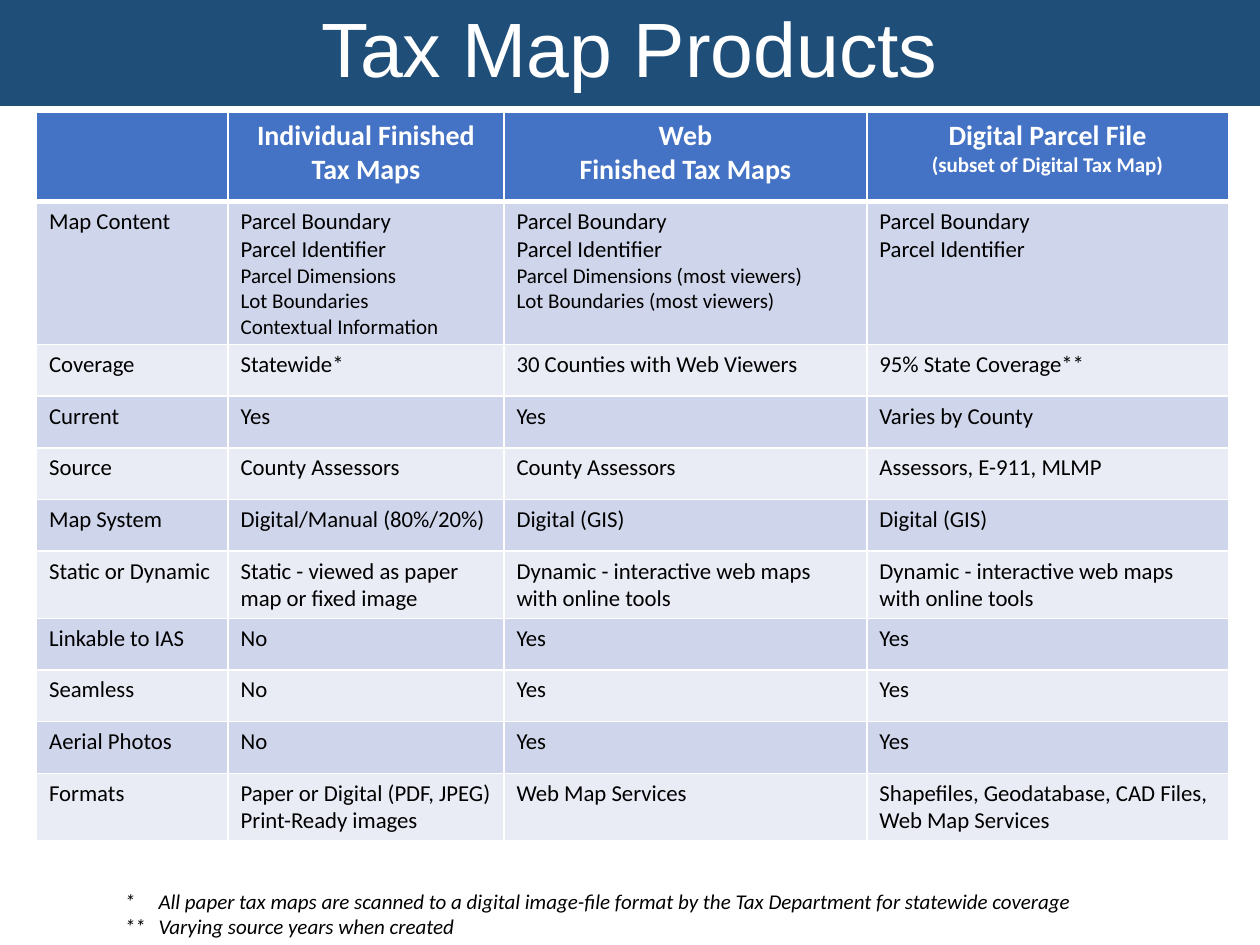
from lxml import etree
from pptx import Presentation
from pptx.dml.color import RGBColor
from pptx.enum.shapes import MSO_SHAPE
from pptx.enum.text import MSO_ANCHOR, PP_ALIGN
from pptx.oxml.ns import qn
from pptx.util import Pt

RECTANGLE = MSO_SHAPE.RECTANGLE
MIDDLE = MSO_ANCHOR.MIDDLE
CENTER, LEFT = PP_ALIGN.CENTER, PP_ALIGN.LEFT

EMU_PER_PX = 9144  # 100 px to the inch
COLORS = {
    "banner": "1F4E79",
    "header": "4472C4",
    "dark_band": "CFD5EA",
    "light_band": "E9EBF5",
    "white": "FFFFFF",
    "black": "000000",
}

COLUMN_WIDTHS = [152, 219, 288, 287]
HEADER_HEIGHT, ROW_HEIGHT = 71, 41
BODY_SIZE, SMALL_SIZE = 13, 12

# Each cell is a list of lines; a line is a text or a (text, size) pair
HEADERS = [
    [],
    ["Individual Finished Tax Maps"],
    ["Web", "Finished Tax Maps"],
    ["Digital Parcel File", ("(subset of Digital Tax Map)", SMALL_SIZE)],
]
PARCEL = ["Parcel Boundary", "Parcel Identifier"]
INTERACTIVE = "Dynamic - interactive web maps with online tools"
ROWS = [
    [["Map Content"],
     PARCEL + [("Parcel Dimensions", SMALL_SIZE), ("Lot Boundaries", SMALL_SIZE),
               ("Contextual Information", SMALL_SIZE)],
     PARCEL + [("Parcel Dimensions (most viewers)", SMALL_SIZE),
               ("Lot Boundaries (most viewers)", SMALL_SIZE)],
     PARCEL],
    [["Coverage"], ["Statewide*"], ["30 Counties with Web Viewers"], ["95% State Coverage**"]],
    [["Current"], ["Yes"], ["Yes"], ["Varies by County"]],
    [["Source"], ["County Assessors"], ["County Assessors"], ["Assessors, E-911, MLMP"]],
    [["Map System"], ["Digital/Manual (80%/20%)"], ["Digital (GIS)"], ["Digital (GIS)"]],
    [["Static or Dynamic"], ["Static - viewed as paper map or fixed image"],
     [INTERACTIVE], [INTERACTIVE]],
    [["Linkable to IAS"], ["No"], ["Yes"], ["Yes"]],
    [["Seamless"], ["No"], ["Yes"], ["Yes"]],
    [["Aerial Photos"], ["No"], ["Yes"], ["Yes"]],
    [["Formats"], ["Paper or Digital (PDF, JPEG) Print-Ready images"],
     ["Web Map Services"], ["Shapefiles, Geodatabase, CAD Files, Web Map Services"]],
]
FOOTNOTES = [
    "*\tAll paper tax maps are scanned to a digital image-file format "
    "by the Tax Department for statewide coverage",
    "**\tVarying source years when created",
]


def px(length):
    return length * EMU_PER_PX


def rgb(name):
    return RGBColor.from_string(COLORS[name])


class SlideBuilder:
    font = "Calibri"

    def __init__(self, page):
        self.page = page

    def add_lines(self, frame, lines, size, color, align=LEFT, font=None, bold=False, italic=False):
        for index, line in enumerate(lines):
            text, line_size = line if isinstance(line, tuple) else (line, size)
            para = frame.paragraphs[0] if index == 0 else frame.add_paragraph()
            para.alignment = align
            span = para.add_run()
            span.text = text
            span.font.name = font or self.font
            span.font.size = Pt(line_size)
            span.font.bold = bold
            span.font.italic = italic
            span.font.color.rgb = rgb(color)

    def banner(self, left, top, width, height, text):
        box = self.page.shapes.add_shape(RECTANGLE, px(left), px(top), px(width), px(height))
        box.shadow.inherit = False
        box.fill.solid()
        box.fill.fore_color.rgb = rgb("banner")
        box.line.fill.background()
        box.text_frame.vertical_anchor = MIDDLE
        self.add_lines(box.text_frame, [text], 44, "white", CENTER, font="Arial")
        box.text_frame.paragraphs[0].line_spacing = 0.9

    def notes(self, left, top, width, height, lines, indent):
        box = self.page.shapes.add_textbox(px(left), px(top), px(width), px(height))
        box.text_frame.word_wrap = True
        self.add_lines(box.text_frame, lines, SMALL_SIZE, "black", italic=True)
        for para in box.text_frame.paragraphs:
            properties = para._p.get_or_add_pPr()
            properties.set("marL", str(px(indent)))
            properties.set("indent", str(-px(indent)))

    def borders(self, cell, **widths):
        properties = cell._tc.get_or_add_tcPr()
        for side in ("L", "R", "T", "B"):
            line = etree.SubElement(properties, qn(f"a:ln{side}"), w=str(Pt(widths.get(side, 1))))
            fill = etree.SubElement(line, qn("a:solidFill"))
            etree.SubElement(fill, qn("a:srgbClr"), val=COLORS["white"])

    def table(self, left, top, headers, rows):
        height = HEADER_HEIGHT + ROW_HEIGHT * len(rows)
        frame = self.page.shapes.add_table(
            len(rows) + 1, len(headers), px(left), px(top), px(sum(COLUMN_WIDTHS)), px(height))
        grid = frame.table
        grid.horz_banding = False
        for column, width in zip(grid.columns, COLUMN_WIDTHS):
            column.width = px(width)
        for r, cells in enumerate([headers] + rows):
            grid.rows[r].height = px(ROW_HEIGHT if r else HEADER_HEIGHT)
            for c, lines in enumerate(cells):
                cell = grid.cell(r, c)
                # A thick rule parts the header from the body
                self.borders(cell, B=1 if r else 3, T=3 if r == 1 else 1)
                cell.fill.solid()
                if r == 0:
                    cell.fill.fore_color.rgb = rgb("header")
                    self.add_lines(cell.text_frame, lines, 16, "white", CENTER, bold=True)
                else:
                    cell.fill.fore_color.rgb = rgb("dark_band" if r % 2 else "light_band")
                    self.add_lines(cell.text_frame, lines, BODY_SIZE, "black")


def main():
    deck = Presentation()
    deck.slide_width, deck.slide_height = px(1000), px(750)
    builder = SlideBuilder(deck.slides.add_slide(deck.slide_layouts[6]))

    # Title
    builder.banner(0, 0, 1000, 84, "Tax Map Products")
    # Footnotes
    builder.notes(89, 700, 853, 50, FOOTNOTES, indent=27)
    # Product comparison
    builder.table(29, 89, HEADERS, ROWS)

    deck.save("out.pptx")


if __name__ == "__main__":
    main()
